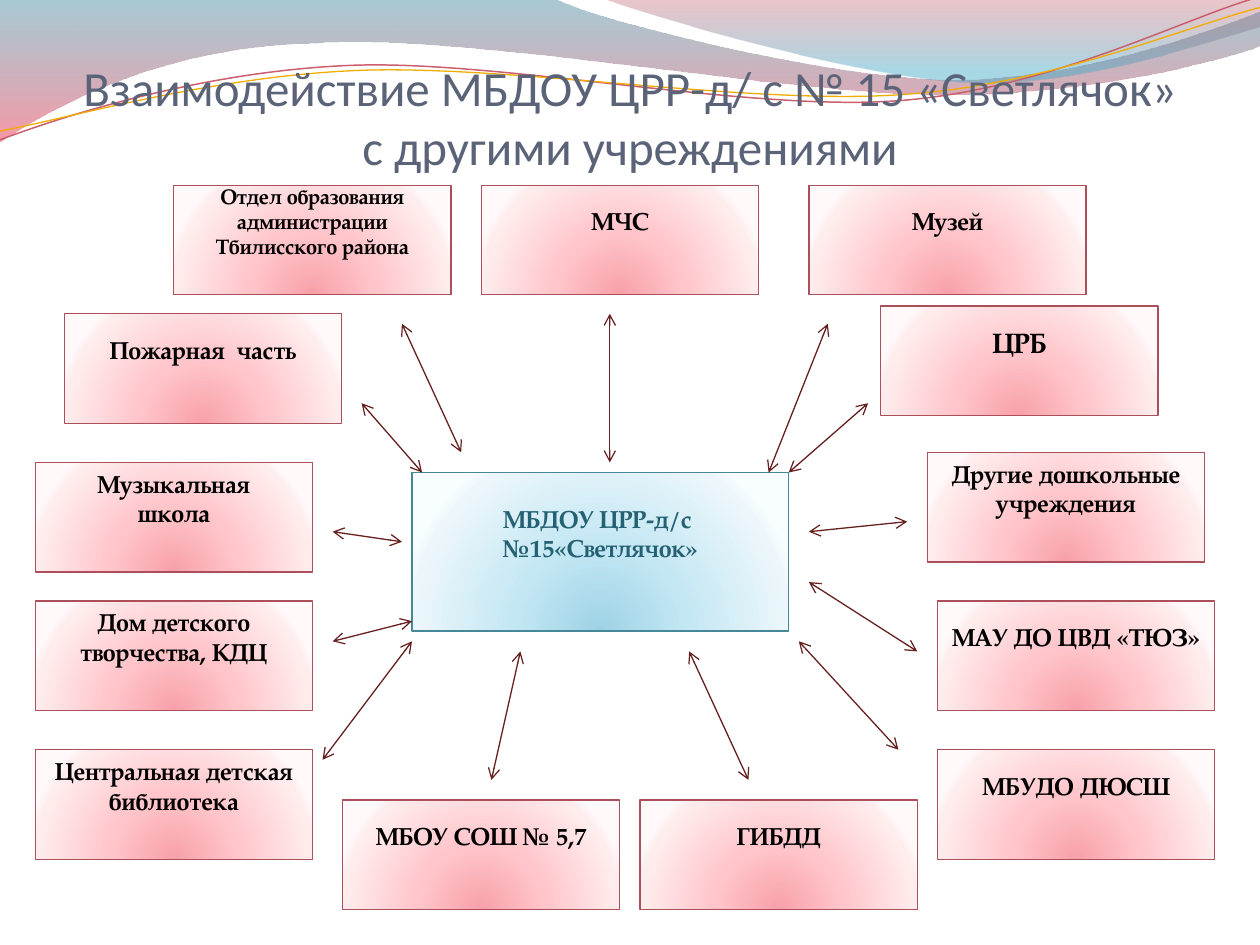
from lxml import etree
from pptx import Presentation
from pptx.dml.color import RGBColor
from pptx.enum.shapes import MSO_CONNECTOR, MSO_SHAPE
from pptx.enum.text import MSO_ANCHOR, PP_ALIGN
from pptx.oxml import parse_xml
from pptx.oxml.ns import nsdecls, qn
from pptx.util import Inches, Pt

RECTANGLE, STRAIGHT = MSO_SHAPE.RECTANGLE, MSO_CONNECTOR.STRAIGHT
CENTER, MIDDLE, BOTTOM = PP_ALIGN.CENTER, MSO_ANCHOR.MIDDLE, MSO_ANCHOR.BOTTOM

# Content
TITLE = ["Взаимодействие МБДОУ ЦРР-д/ с № 15 «Светлячок»\vс другими учреждениями"]
HUB = ["МБДОУ ЦРР-д/с ", "№15«Светлячок»"]
HUB_PLACE = (3.27, 3.75, 2.99, 1.26)
BOX_SIZE = (2.2, 0.87)
TOP_ROW, LOWER_ROW, LAST_ROW, BOTTOM_ROW = 1.47, 4.77, 5.95, 6.35
LEFT_COLUMN, RIGHT_COLUMN = 0.28, 7.44
PARTNERS = [  # left, top, paragraphs, type size key
    (3.82, TOP_ROW, ["МЧС"], "box"),
    (RIGHT_COLUMN, LOWER_ROW, ["МАУ ДО ЦВД «ТЮЗ»"], "box"),
    (RIGHT_COLUMN, LAST_ROW, ["МБУДО ДЮСШ"], "box"),
    (6.99, 2.43, ["ЦРБ"], "large"),
    (0.51, 2.49, ["Пожарная  часть"], "box"),
    (1.38, TOP_ROW, ["Отдел образования администрации Тбилисского района"], "small"),
    (LEFT_COLUMN, 3.67, ["Музыкальная", "школа"], "box"),
    (7.36, 3.59, ["Другие дошкольные учреждения"], "box"),
    (LEFT_COLUMN, LOWER_ROW, ["Дом детского творчества, КДЦ"], "box"),
    (6.42, TOP_ROW, ["Музей"], "box"),
    (LEFT_COLUMN, LAST_ROW, ["Центральная детская библиотека"], "box"),
    (2.72, BOTTOM_ROW, ["МБОУ СОШ № 5,7"], "box"),
    (5.08, BOTTOM_ROW, ["ГИБДД"], "box"),
]
ARROWS = [  # from x, from y, to x, to y
    (3.19, 2.57, 3.66, 3.59), (4.84, 2.49, 4.84, 3.67),
    (4.13, 5.17, 3.9, 6.19), (3.27, 5.09, 2.56, 6.03),
    (6.34, 5.09, 7.13, 5.95), (5.47, 5.17, 5.94, 6.19),
    (6.57, 2.57, 6.1, 3.75), (6.89, 3.2, 6.26, 3.75),
    (6.42, 4.62, 7.28, 5.17), (6.42, 4.22, 7.2, 4.14),
    (2.64, 4.22, 3.19, 4.3), (2.87, 3.2, 3.35, 3.75),
    (2.64, 5.09, 3.27, 4.93),
]

# Waves: a start point, then lines (2 numbers) and Bezier curves (6 numbers)
BANDS = [
    ([(0, 0), (4.4, -0.01), (4.76, 0.17, 6.64, 0.63, 7.58, 0.63),
      (8.53, 0.63, 9.58, 0.26, 10, 0.09), (10.01, 0.36),
      (9.83, 0.44, 8.7, 0.76, 7.46, 0.75), (6.22, 0.75, 3.82, 0.28, 2.57, 0.34),
      (1.29, 0.36, 0.46, 0.83, -0.01, 1.13), (0, 0)], "left_band"),
    ([(4.79, -0.01), (5.09, 0.11, 6.82, 0.62, 7.69, 0.65),
      (8.56, 0.69, 9.61, 0.32, 10, 0.21), (10, 0), (4.79, -0.01)], "right_band"),
]
STRANDS = [
    ([(0, 1.11), (0.48, 0.93, 1.58, 0.57, 2.77, 0.52),
      (3.95, 0.47, 5.93, 0.89, 7.13, 0.8), (8.33, 0.71, 9.38, 0.15, 9.98, -0.02)],
     "red_strand", 0.85),
    ([(0, 1.04), (0.47, 0.96, 1.64, 0.61, 2.83, 0.56),
      (4.03, 0.51, 5.97, 0.84, 7.17, 0.75), (8.36, 0.67, 9.41, 0.21, 10, 0.06)],
     "gold_strand", 0.75),
]

THEME = {
    "title_font": "Calibri", "box_font": "TeX Gyre Pagella",
    "sizes": {"title": 28, "box": 14, "small": 12, "large": 16},
    "colors": {"title": "5A6378", "hub_text": "246172", "box_text": "000000",
               "hub_line": "468798", "box_line": "AC4F5B", "arrow": "672020",
               "red_strand": "CB5F6E", "gold_strand": "F0AD00"},
    # Gradient stops: position, colour, opacity
    "gradients": {
        "hub": [(0, "9ED3E5", 100), (43, "C4E7F4", 100),
                (93, "EDF7FB", 100), (100, "F8FDFF", 100)],
        "box": [(0, "F8A1AA", 100), (43, "FFC5CA", 100),
                (93, "FFEDEE", 100), (100, "FFF9FA", 100)],
        "left_band": [(0, "3F8A9F", 45), (100, "EF445B", 55)],
        "right_band": [(0, "B84253", 30), (80, "42ABC7", 45)],
    },
}
DOWNWARD = '<a:lin ang="5400000" scaled="0"/>'
GLOW = ('<a:path path="circle"><a:fillToRect l="50000" t="130000" '
        'r="50000" b="-30000"/></a:path>')


def color(name):
    return RGBColor.from_string(THEME["colors"][name])


def set_line(shape, name, width=0.75):
    shape.line.color.rgb = color(name)
    shape.line.width = Pt(width)


def set_gradient(shape, name, direction):
    stops = "".join(
        f'<a:gs pos="{position * 1000}"><a:srgbClr val="{rgb}">'
        + (f'<a:alpha val="{opacity * 1000}"/>' if opacity < 100 else "")
        + '</a:srgbClr></a:gs>'
        for position, rgb, opacity in THEME["gradients"][name])
    gradient = parse_xml(f'<a:gradFill {nsdecls("a")} rotWithShape="1">'
                         f'<a:gsLst>{stops}</a:gsLst>{direction}</a:gradFill>')
    shape.fill.solid()
    properties = shape._element.spPr
    properties.replace(properties.find(qn("a:solidFill")), gradient)


def set_text(shape, paragraphs, font_name, size, color_name, bold, anchor, insets):
    frame = shape.text_frame
    frame.word_wrap = True
    frame.vertical_anchor = anchor
    (frame.margin_left, frame.margin_top,
     frame.margin_right, frame.margin_bottom) = map(Inches, insets)
    frame.text = "\n".join(paragraphs)
    for paragraph in frame.paragraphs:
        paragraph.alignment = CENTER
        font = paragraph.font
        font.name, font.size, font.bold = font_name, Pt(size), bold
        font.color.rgb = color(color_name)


def add_wave(slide, segments, close):
    """Draw the points as lines, then join each group of three into a curve."""
    points = [(Inches(segment[i]), Inches(segment[i + 1]))
              for segment in segments for i in range(0, len(segment), 2)]
    builder = slide.shapes.build_freeform(*points[0])
    builder.add_line_segments(points[1:], close=close)
    wave = builder.convert_to_shape()
    wave.shadow.inherit = False
    lines = iter(wave._element.findall(".//" + qn("a:lnTo")))
    for segment in segments[1:]:
        line = next(lines)
        if len(segment) == 6:
            curve = etree.Element(qn("a:cubicBezTo"))
            line.addprevious(curve)
            for part in (line, next(lines), next(lines)):
                curve.append(part[0])
                part.getparent().remove(part)
    return wave


def add_box(slide, place, paragraphs, kind, size_key):
    box = slide.shapes.add_shape(RECTANGLE, *map(Inches, place))
    box.shadow.inherit = False
    set_gradient(box, kind, GLOW)
    set_line(box, f"{kind}_line")
    set_text(box, paragraphs, THEME["box_font"], THEME["sizes"][size_key],
             f"{kind}_text", True, MIDDLE, (0.1, 0, 0.1, 0.3))


def add_arrow(slide, ends):
    arrow = slide.shapes.add_connector(STRAIGHT, *map(Inches, ends))
    set_line(arrow, "arrow")
    line = arrow.line._get_or_add_ln()
    for end in ("headEnd", "tailEnd"):
        line.append(parse_xml(f'<a:{end} {nsdecls("a")} type="arrow"/>'))
    arrow._element.spPr.append(parse_xml(f'<a:effectLst {nsdecls("a")}/>'))


def main():
    presentation = Presentation()
    presentation.slide_width, presentation.slide_height = Inches(10), Inches(7.5)
    slide = presentation.slides.add_slide(presentation.slide_layouts[6])

    # Wave decoration
    for segments, gradient in BANDS:
        band = add_wave(slide, segments, True)
        set_gradient(band, gradient, DOWNWARD)
        band.line.fill.background()
    for segments, color_name, width in STRANDS:
        strand = add_wave(slide, segments, False)
        strand.fill.background()
        set_line(strand, color_name, width)

    # Title
    title = slide.shapes.add_textbox(*map(Inches, (0.5, 0.52, 9, 0.87)))
    set_text(title, TITLE, THEME["title_font"], THEME["sizes"]["title"],
             "title", False, BOTTOM, (0, 0.05, 0, 0))

    # Hub, partners and the arrows between them
    add_box(slide, HUB_PLACE, HUB, "hub", "box")
    for left, top, paragraphs, size_key in PARTNERS:
        add_box(slide, (left, top, *BOX_SIZE), paragraphs, "box", size_key)
    for ends in ARROWS:
        add_arrow(slide, ends)

    presentation.save("out.pptx")


if __name__ == "__main__":
    main()
